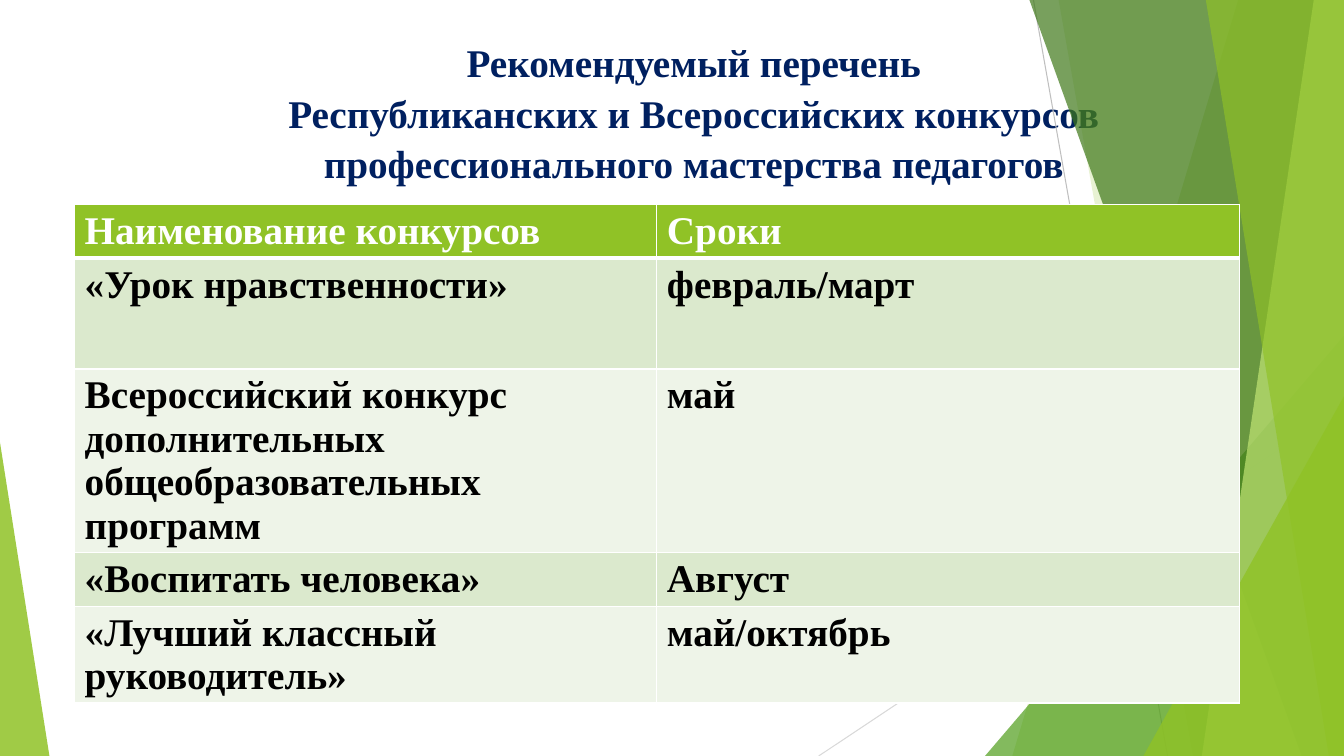
from dataclasses import dataclass

from lxml import etree
from pptx import Presentation
from pptx.dml.color import RGBColor
from pptx.enum.shapes import MSO_CONNECTOR, MSO_SHAPE
from pptx.enum.text import MSO_ANCHOR, MSO_AUTO_SIZE, PP_ALIGN
from pptx.oxml.ns import qn
from pptx.util import Inches, Pt

STRAIGHT = MSO_CONNECTOR.STRAIGHT
TRIANGLE = MSO_SHAPE.ISOSCELES_TRIANGLE
TOP = MSO_ANCHOR.TOP
NO_AUTOFIT = MSO_AUTO_SIZE.NONE
CENTER = PP_ALIGN.CENTER

WIDTH, HEIGHT = 13.33, 7.5
TITLE_ONLY = 5


@dataclass(frozen=True)
class Theme:
    font: str = "Times New Roman"
    text_size: float = 28
    title: str = "002060"
    text: str = "000000"
    white: str = "FFFFFF"
    green: str = "90C226"
    mid_green: str = "54A021"
    dark_green: str = "3F7819"
    light_green: str = "C0E474"
    bands: tuple = ("DBE9CD", "EEF4E8")
    line_dark: str = "BFBFBF"
    line_light: str = "D9D9D9"
    line_width: float = 0.75
    border: float = 1
    header_border: float = 3


class SlideBuilder:
    def __init__(self, presentation, theme):
        self.theme = theme
        layout = presentation.slide_layouts[TITLE_ONLY]
        self.slide = presentation.slides.add_slide(layout)
        self.shapes = self.slide.shapes

    def background(self, color):
        fill = self.slide.background.fill
        fill.solid()
        fill.fore_color.rgb = RGBColor.from_string(color)

    def format_text(self, paragraph, color):
        for run in paragraph.runs:
            run.font.name = self.theme.font
            run.font.size = Pt(self.theme.text_size)
            run.font.bold = True
            run.font.color.rgb = RGBColor.from_string(color)

    def paint(self, shape, color, opacity):
        shape.shadow.inherit = False
        shape.fill.solid()
        shape.fill.fore_color.rgb = RGBColor.from_string(color)
        shape.line.fill.background()
        color_node = shape.element.spPr.find(qn("a:solidFill"))[0]
        alpha = etree.SubElement(color_node, qn("a:alpha"))
        alpha.set("val", str(opacity * 1000))

    def line(self, start, end, color):
        points = [Inches(value) for value in (*start, *end)]
        connector = self.shapes.add_connector(STRAIGHT, *points)
        connector.line.color.rgb = RGBColor.from_string(color)
        connector.line.width = Pt(self.theme.line_width)
        etree.SubElement(connector.element.spPr, qn("a:effectLst"))

    def facet(self, top_left, bottom_left, color, opacity):
        """Full-height panel from a slanted left edge to the right slide edge."""
        builder = self.shapes.build_freeform(Inches(top_left), 0)
        corners = [(WIDTH, 0), (WIDTH, HEIGHT), (bottom_left, HEIGHT)]
        builder.add_line_segments([(Inches(x), Inches(y)) for x, y in corners])
        self.paint(builder.convert_to_shape(), color, opacity)

    def triangle(self, left, top, width, apex, color, opacity):
        """Triangle standing on the bottom slide edge."""
        shape = self.shapes.add_shape(TRIANGLE, Inches(left), Inches(top),
                                      Inches(width), Inches(HEIGHT - top))
        shape.adjustments[0] = apex
        self.paint(shape, color, opacity)

    def title(self, lines, left, top, width, height):
        shape = self.shapes.title
        shape.left, shape.top = Inches(left), Inches(top)
        shape.width, shape.height = Inches(width), Inches(height)
        frame = shape.text_frame
        frame.text = "\v".join(lines)
        frame.word_wrap = True
        frame.auto_size = NO_AUTOFIT
        frame.vertical_anchor = TOP
        paragraph = frame.paragraphs[0]
        paragraph.alignment = CENTER
        paragraph.line_spacing = 1.08
        self.format_text(paragraph, self.theme.title)

    def cell_borders(self, cell, bottom, top):
        properties = cell._tc.get_or_add_tcPr()
        side = self.theme.border
        for tag, width in (("lnL", side), ("lnR", side), ("lnT", top), ("lnB", bottom)):
            border = etree.SubElement(properties, qn(f"a:{tag}"), w=str(Pt(width)))
            fill = etree.SubElement(border, qn("a:solidFill"))
            etree.SubElement(fill, qn("a:srgbClr"), val=self.theme.white)

    def table(self, rows, heights, left, top, width):
        theme = self.theme
        columns = len(rows[0])
        table = self.shapes.add_table(len(rows), columns, Inches(left), Inches(top),
                                      Inches(width), Inches(sum(heights))).table
        table.horz_banding = False
        for column in table.columns:
            column.width = Inches(width / columns)
        for index, (values, height) in enumerate(zip(rows, heights)):
            table.rows[index].height = Inches(height)
            header = index == 0
            fill = theme.green if header else theme.bands[(index - 1) % 2]
            bottom = theme.header_border if header else theme.border
            upper = theme.header_border if index == 1 else theme.border
            for cell, value in zip(table.rows[index].cells, values):
                self.cell_borders(cell, bottom, upper)
                cell.fill.solid()
                cell.fill.fore_color.rgb = RGBColor.from_string(fill)
                cell.text_frame.text = value
                self.format_text(cell.text_frame.paragraphs[0],
                                 theme.white if header else theme.text)


def main():
    presentation = Presentation()
    presentation.slide_width = Inches(WIDTH)
    presentation.slide_height = Inches(HEIGHT)
    theme = Theme()
    builder = SlideBuilder(presentation, theme)
    builder.background(theme.white)

    # Green facets behind the content
    builder.line((10.25, 0), (11.58, HEIGHT), theme.line_dark)
    builder.line((WIDTH, 4.03), (8.12, HEIGHT), theme.line_light)
    builder.facet(12.28, 10.04, theme.green, 30)
    builder.facet(10.5, 11.83, theme.green, 20)
    builder.triangle(9.77, 3.33, 3.56, 1, theme.mid_green, 72)
    builder.facet(10.21, 12.91, theme.dark_green, 70)
    builder.facet(13.03, 11.92, theme.light_green, 70)
    builder.facet(11.96, 13.18, theme.green, 65)
    builder.triangle(11.34, 3.93, 1.99, 1, theme.green, 80)
    builder.triangle(0, 4.39, 0.49, 0, theme.green, 85)

    # Title
    builder.title(["Рекомендуемый перечень",
                   "Республиканских и Всероссийских конкурсов",
                   "профессионального мастерства педагогов"],
                  0.74, 0.29, 12.28, 1.1)

    # Contest table
    contests = [
        ("Наименование конкурсов", "Сроки"),
        ("«Урок нравственности»", "февраль/март"),
        ("Всероссийский конкурс дополнительных общеобразовательных программ", "май"),
        ("«Воспитать человека»", "Август"),
        ("«Лучший классный руководитель»", "май/октябрь"),
    ]
    builder.table(contests, [0.53, 1.1, 1.82, 0.53, 0.96], 0.74, 2.03, 11.55)

    presentation.save("out.pptx")


if __name__ == "__main__":
    main()
